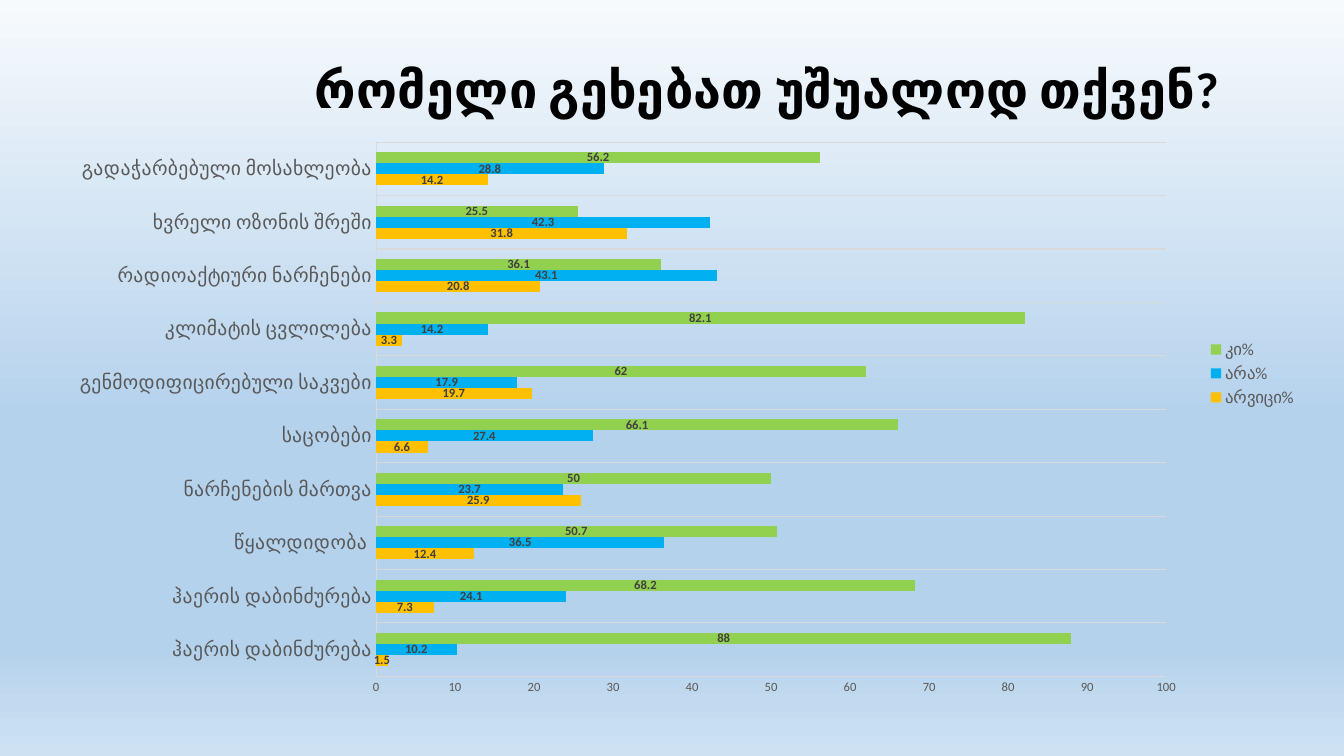
from lxml import etree
from pptx import Presentation
from pptx import util as u
from pptx.chart.data import CategoryChartData
from pptx.dml.color import RGBColor
from pptx.enum import chart as chart_enum
from pptx.oxml.ns import qn

FONT = "Calibri"
COLORS = {
    "title": "000000",
    "axis_text": "595959",
    "label": "404040",
    "grid": "D9D9D9",
    "unknown": "FFC000",
    "no": "00B0F0",
    "yes": "92D050",
}
BACKGROUND_STOPS = [
    (0, "F7FAFD"), (55, "B5D2EC"), (86, "B5D2EC"),
    (93, "C2DAEF"), (96, "C8DEF1"), (100, "CEE1F2"),
]
TITLE = "რომელი გეხებათ უშუალოდ თქვენ?"
CATEGORIES = [
    "ჰაერის დაბინძურება", "ჰაერის დაბინძურება", "წყალდიდობა ",
    "ნარჩენების მართვა", "საცობები", "გენმოდიფიცირებული საკვები",
    "კლიმატის ცვლილება", "რადიოაქტიური ნარჩენები",
    "ხვრელი ოზონის შრეში", "გადაჭარბებული მოსახლეობა",
]
ANSWERS = [
    ("არვიცი%", "unknown", [1.5, 7.3, 12.4, 25.9, 6.6, 19.7, 3.3, 20.8, 31.8, 14.2]),
    ("არა%", "no", [10.2, 24.1, 36.5, 23.7, 27.4, 17.9, 14.2, 43.1, 42.3, 28.8]),
    ("კი%", "yes", [88, 68.2, 50.7, 50, 66.1, 62, 82.1, 36.1, 25.5, 56.2]),
]


def style_font(font, size, color, bold=False):
    font.name = FONT
    font.size = u.Pt(size)
    font.bold = bold
    font.color.rgb = RGBColor.from_string(COLORS[color])


def style_line(line):
    line.color.rgb = RGBColor.from_string(COLORS["grid"])
    line.width = u.Pt(0.75)


def paint_background(slide):
    slide.background.fill.gradient()
    gradient = slide.element.find(".//" + qn("a:gradFill"))
    stops = gradient.find(qn("a:gsLst"))
    for stop in list(stops):
        stops.remove(stop)
    for position, color in BACKGROUND_STOPS:
        stop = etree.SubElement(stops, qn("a:gs"), pos=str(position * 1000))
        etree.SubElement(stop, qn("a:srgbClr"), val=color)
    gradient.find(qn("a:lin")).set("ang", "5400000")


def place_part(element, index, **fractions):
    for old_layout in element.findall(qn("c:layout")):
        element.remove(old_layout)
    layout = etree.Element(qn("c:layout"))
    manual = etree.SubElement(layout, qn("c:manualLayout"))
    if "w" in fractions:
        etree.SubElement(manual, qn("c:layoutTarget"), val="inner")
    for side in ("x", "y"):
        etree.SubElement(manual, qn(f"c:{side}Mode"), val="edge")
    for side, fraction in fractions.items():
        etree.SubElement(manual, qn(f"c:{side}"), val=str(fraction))
    element.insert(index, layout)


def add_title(chart):
    frame = chart.chart_title.text_frame
    frame.text = TITLE
    style_font(frame.paragraphs[0].runs[0].font, 36, "title", True)
    place_part(chart.chart_title._element, 1, x=0.2, y=0.01)


def style_axes(chart):
    for axis, size in ((chart.category_axis, 14), (chart.value_axis, 9)):
        axis.major_tick_mark = chart_enum.XL_TICK_MARK.NONE
        axis.minor_tick_mark = chart_enum.XL_TICK_MARK.NONE
        style_font(axis.tick_labels.font, size, "axis_text")
    chart.category_axis.has_major_gridlines = True
    style_line(chart.category_axis.major_gridlines.format.line)
    style_line(chart.category_axis.format.line)
    chart.value_axis.has_major_gridlines = False
    chart.value_axis.format.line.fill.background()
    chart.value_axis.minimum_scale = 0
    chart.value_axis.maximum_scale = 100
    chart.value_axis.major_unit = 10


def style_bars(plot):
    plot.gap_width = 182
    plot.overlap = 0
    plot.vary_by_categories = False
    for series, (_, color, _) in zip(plot.series, ANSWERS):
        series.format.fill.solid()
        series.format.fill.fore_color.rgb = RGBColor.from_string(COLORS[color])
        labels = series.data_labels
        labels.show_value = True
        labels.position = chart_enum.XL_LABEL_POSITION.CENTER
        style_font(labels.font, 9, "label", True)


def add_answer_chart(slide, left, top, width, height):
    data = CategoryChartData()
    data.categories = CATEGORIES
    for name, _, values in ANSWERS:
        data.add_series(name, values)
    chart = slide.shapes.add_chart(
        chart_enum.XL_CHART_TYPE.BAR_CLUSTERED, left, top, width, height, data
    ).chart
    style_font(chart.font, 10, "title")
    add_title(chart)
    style_axes(chart)
    style_bars(chart.plots[0])
    chart.has_legend = True
    chart.legend.position = chart_enum.XL_LEGEND_POSITION.RIGHT
    chart.legend.include_in_layout = False
    style_font(chart.legend.font, 12, "axis_text")
    plot_area = chart._chartSpace.find(".//" + qn("c:plotArea"))
    place_part(plot_area, 0, x=0.256, y=0.155, w=0.631, h=0.797)


def main():
    presentation = Presentation()
    presentation.slide_width = u.Inches(13.33)
    presentation.slide_height = u.Inches(7.5)
    slide = presentation.slides.add_slide(presentation.slide_layouts[6])
    paint_background(slide)
    add_answer_chart(slide, u.Inches(0.55), u.Inches(0.38), u.Inches(12.42), u.Inches(6.65))
    presentation.save("out.pptx")


if __name__ == "__main__":
    main()
